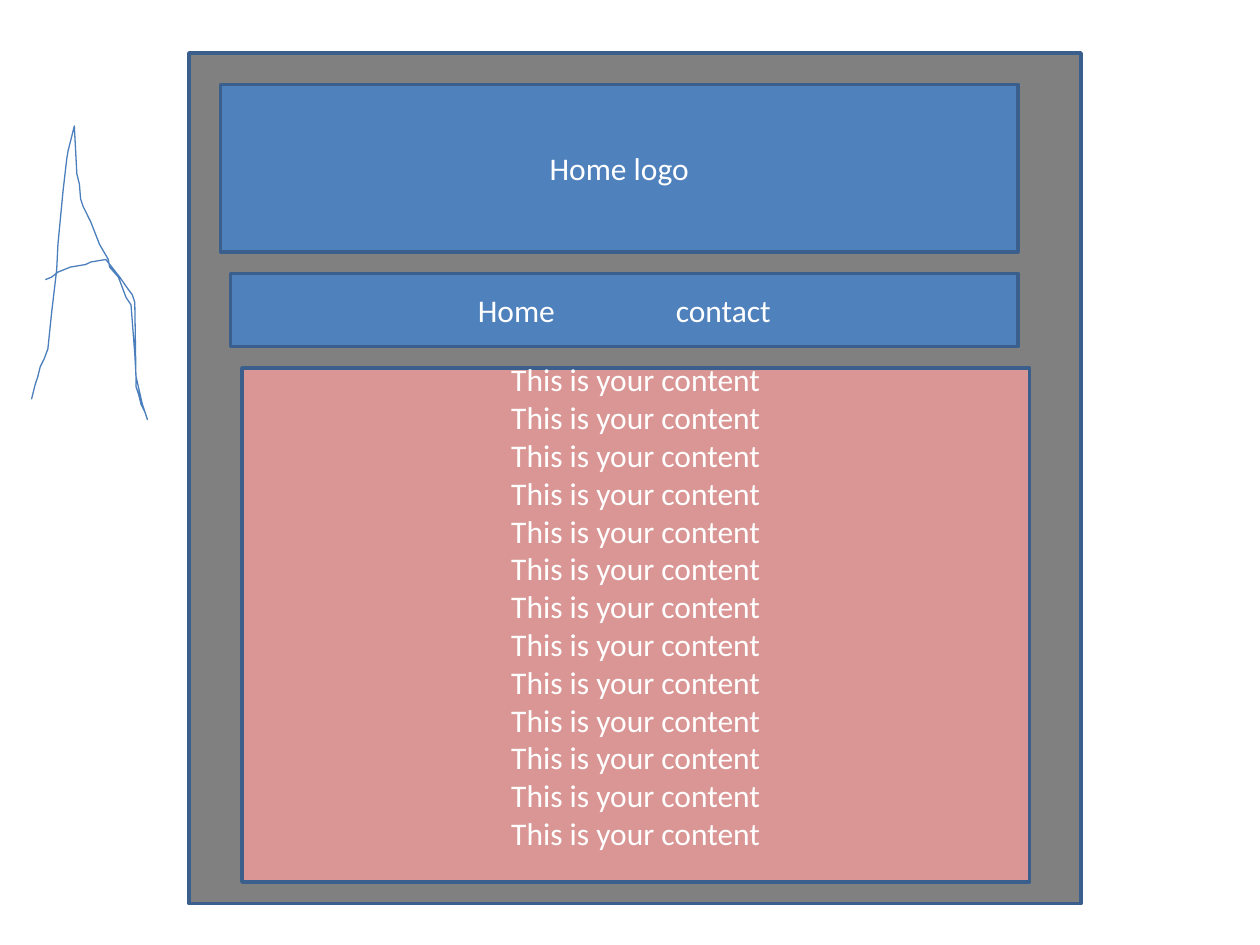
from pptx import Presentation
from pptx.dml.color import RGBColor
from pptx.enum.shapes import MSO_SHAPE as SHAPE
from pptx.enum.text import MSO_ANCHOR as ANCHOR, PP_ALIGN as ALIGN
from pptx.util import Inches, Pt


def rgb(value):
    return RGBColor.from_string(value)


prs = Presentation()
prs.slide_width, prs.slide_height = Inches(10), Inches(7.5)
s = prs.slides.add_slide(prs.slide_layouts[6])

boxes = [
    ((1.5, 0.42, 7.08, 6.75), "808080", [], 0.05),
    ((1.75, 0.67, 6.33, 1.33), "4F81BD", [["Home logo"]], 0.05),
    ((1.83, 2.17, 6.25, 0.58), "4F81BD", [["Home", " ", "contact"]], 0.05),
    ((1.92, 2.92, 6.25, 4.08), "D99694", [["This is your content"]] * 13, 0.35),
]
font = {"name": "Calibri", "size": Pt(18)}

for at, fill, lines, bottom in boxes:
    sp = s.shapes.add_shape(SHAPE.RECTANGLE, *map(Inches, at))
    sp.shadow.inherit = False
    sp.fill.solid()
    sp.fill.fore_color.rgb = rgb(fill)
    sp.line.color.rgb = rgb("3A5F8C")
    sp.line.width = Pt(2)
    tf = sp.text_frame
    frame = {"word_wrap": True, "vertical_anchor": ANCHOR.MIDDLE,
             "margin_bottom": Inches(bottom)}
    for name, value in frame.items():
        setattr(tf, name, value)
    for i, words in enumerate(lines):
        p = tf.add_paragraph() if i else tf.paragraphs[0]
        p.alignment = ALIGN.CENTER
        for word in words:
            r = p.add_run()
            r.text = word
            for name, value in font.items():
                setattr(r.font, name, value)
            r.font.color.rgb = rgb("FFFFFF")
            if word == " ":
                r._r.get_or_add_rPr().set("spc", "6500")

stroke = [
    (25, 317), (28, 305), (30, 299), (32, 291), (35, 285), (38, 277),
    (41, 248), (45, 214), (46, 194), (50, 152), (53, 126), (54, 120),
    (56, 112), (59, 100), (61, 138), (63, 146), (64, 158), (66, 164),
    (72, 176), (79, 194), (86, 206), (87, 212), (94, 220), (100, 236),
    (104, 242), (107, 281), (108, 299), (113, 321), (115, 327), (117, 333),
    (115, 327), (112, 321), (110, 313), (108, 307), (107, 240), (105, 234),
    (102, 230), (95, 220), (84, 206), (72, 208), (68, 210), (56, 212),
    (46, 216), (41, 220), (36, 222),
]
fb = s.shapes.build_freeform(*stroke[0], scale=Inches(0.01))
fb.add_line_segments(stroke[1:], close=False)
letter = fb.convert_to_shape()
letter.shadow.inherit = False
letter.fill.background()
letter.line.color.rgb = rgb("4B7EBC")
letter.line.width = Pt(0.75)

prs.save("out.pptx")
